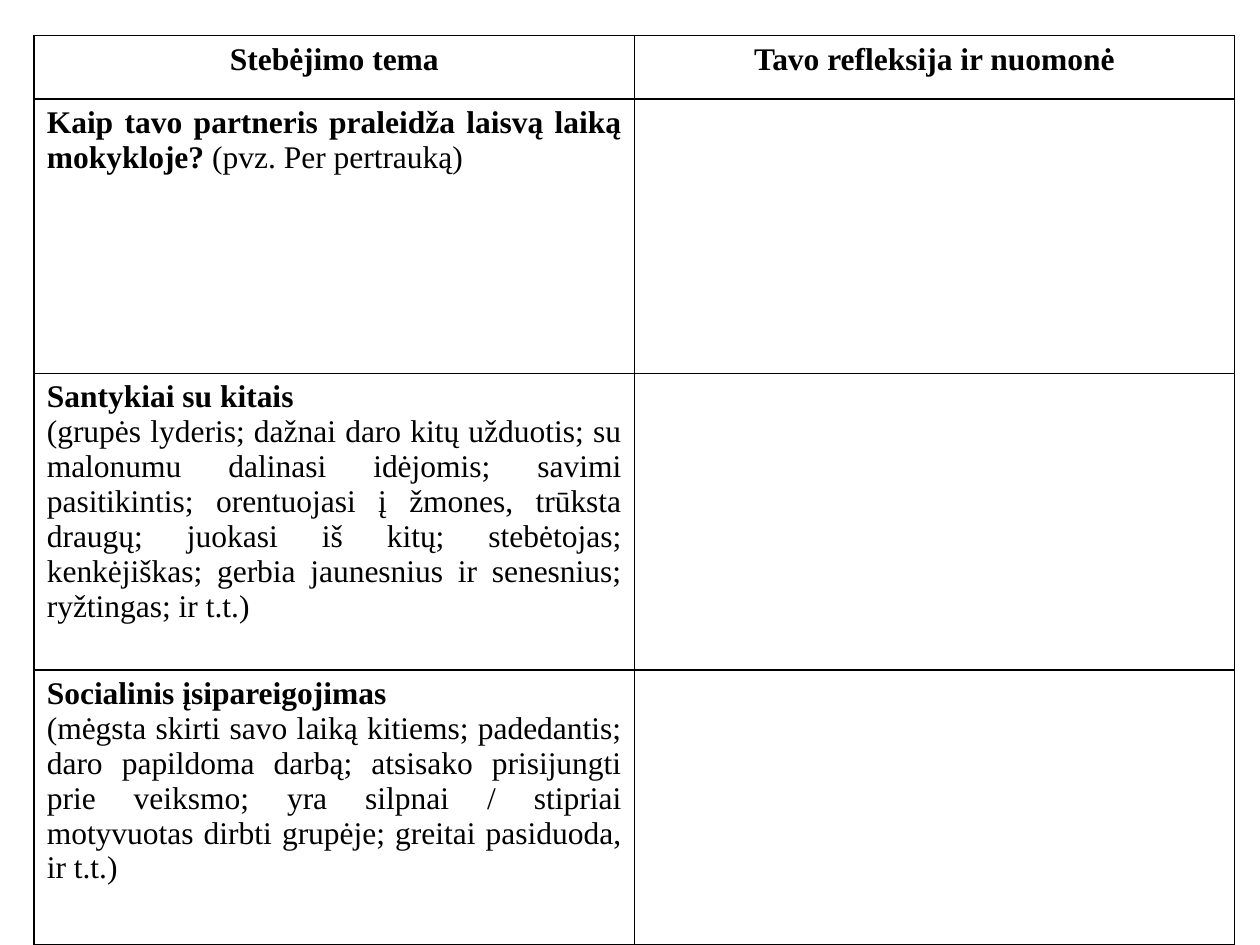
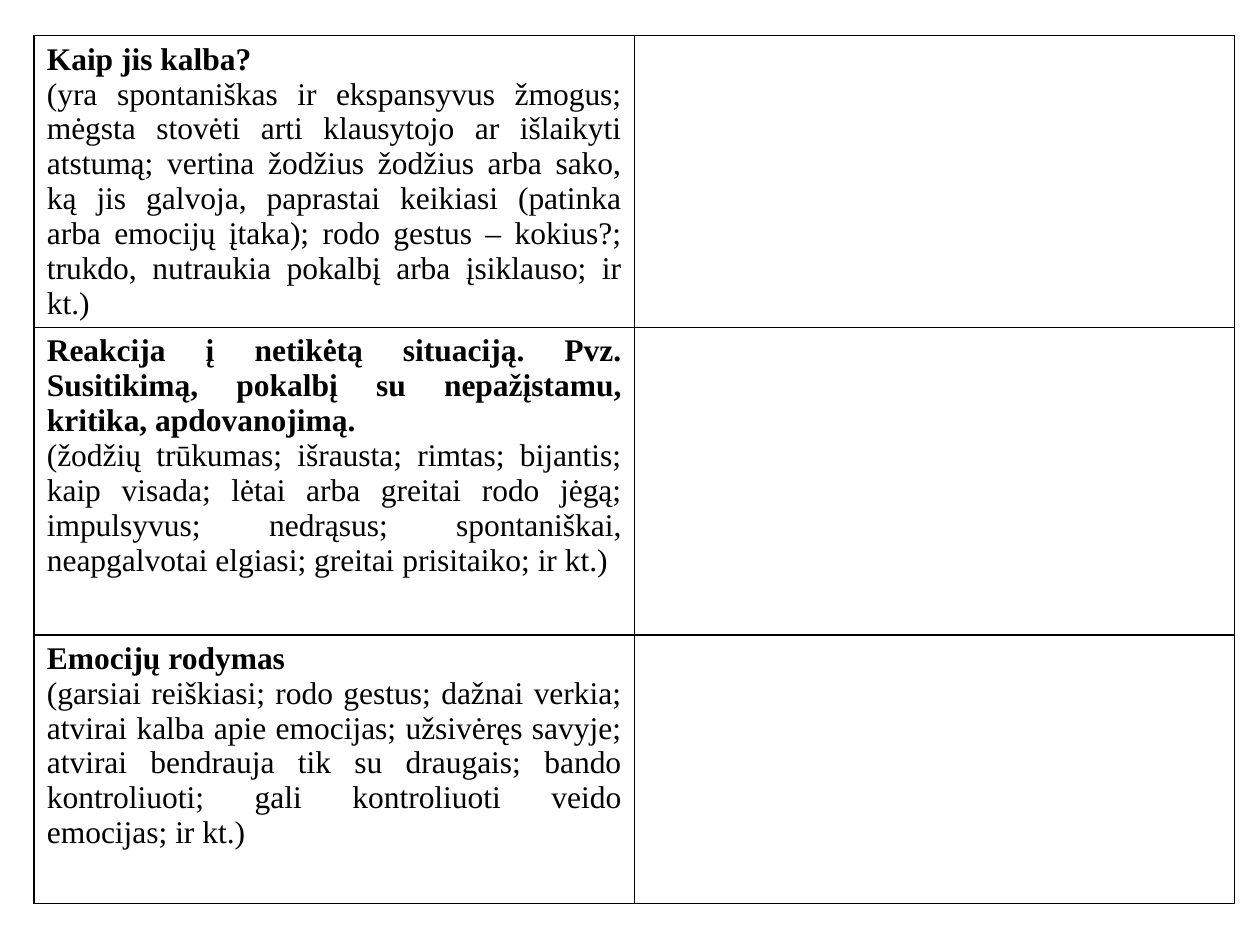
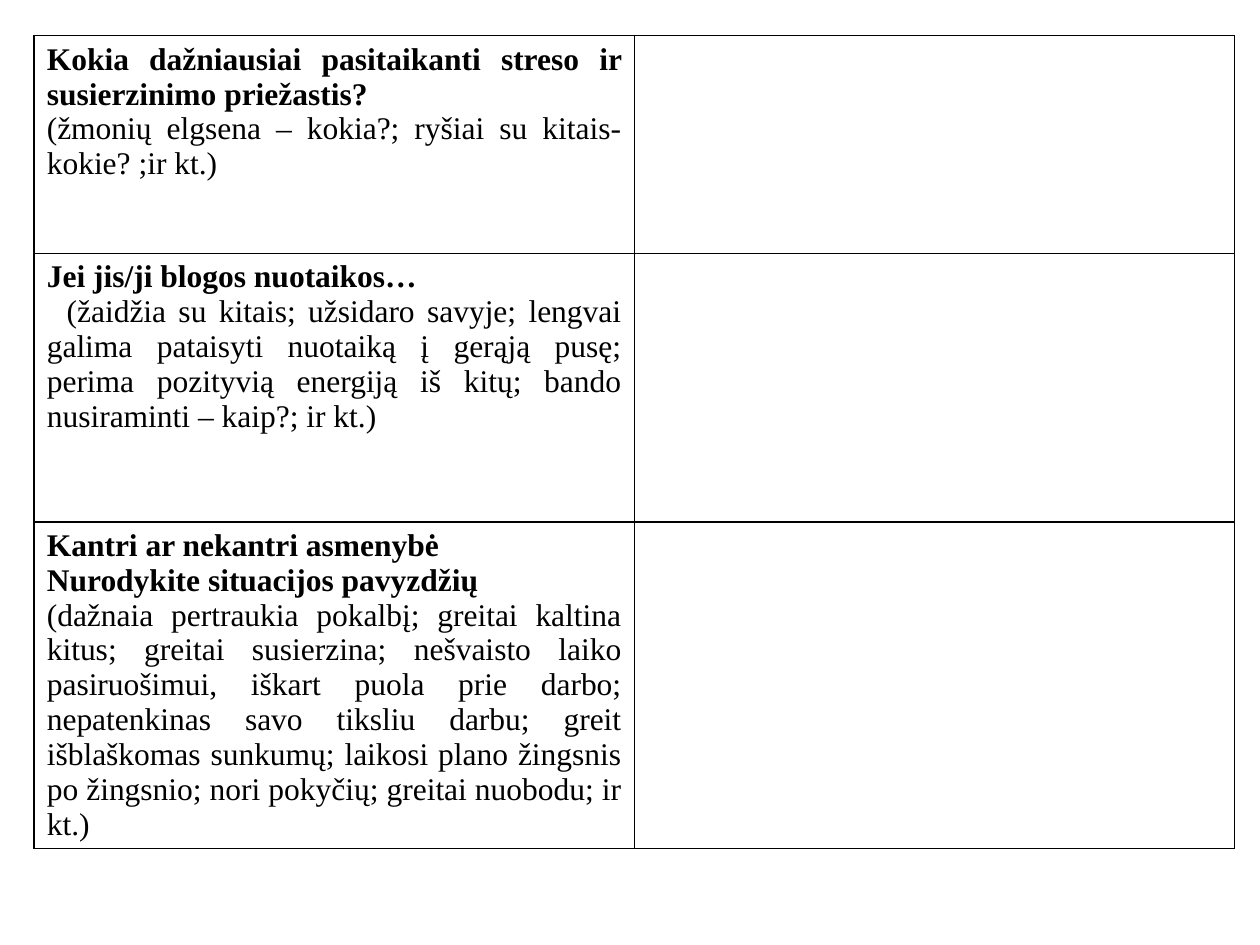
"""Build three slides of an observation sheet with room for reflections."""
from lxml.etree import SubElement
from pptx import Presentation
from pptx.dml.color import RGBColor
from pptx.enum.text import PP_ALIGN
from pptx.oxml.ns import qn
from pptx.util import Cm, Pt

INK = "000000"
PAPER = "FFFFFF"
FONT = "Times New Roman"
LEFT, TOP, COLUMN_WIDTH = Cm(0.69), Cm(0.72), Cm(12.1)
HEADINGS = ["Stebėjimo tema", "Tavo refleksija ir nuomonė"]
HEADING_HEIGHT = 1.28
INDENTED_TOPIC = "Jei jis/ji blogos nuotaikos…"

# Each topic holds its row height in cm and its paragraphs as (bold, regular) text.
SHEETS = [
    [
        (5.53, [("Kaip tavo partneris praleidža laisvą laiką mokykloje? ", "(pvz. Per pertrauką)")]),
        (5.98, [
            ("Santykiai su kitais", ""),
            ("", "(grupės lyderis; dažnai daro kitų užduotis; su malonumu dalinasi idėjomis; "
                 "savimi pasitikintis; orentuojasi į žmones, trūksta draugų; juokasi iš kitų; "
                 "stebėtojas; kenkėjiškas; gerbia jaunesnius ir senesnius; ryžtingas; ir t.t.)"),
        ]),
        (5.53, [
            ("Socialinis įsipareigojimas", ""),
            ("", "(mėgsta skirti savo laiką kitiems; padedantis; daro papildoma darbą; atsisako "
                 "prisijungti prie veiksmo; yra silpnai / stipriai motyvuotas dirbti grupėje; "
                 "greitai pasiduoda, ir t.t.)"),
        ]),
    ],
    [
        (5.87, [
            ("Kaip jis kalba?", ""),
            ("", "(yra spontaniškas ir ekspansyvus žmogus; mėgsta stovėti arti klausytojo ar "
                 "išlaikyti atstumą; vertina žodžius žodžius arba sako, ką jis galvoja, paprastai "
                 "keikiasi (patinka arba emocijų įtaka); rodo gestus – kokius?; trukdo, nutraukia "
                 "pokalbį arba įsiklauso; ir kt.)"),
        ]),
        (6.2, [
            ("Reakcija į netikėtą situaciją. Pvz. Susitikimą, pokalbį su nepažįstamu, kritika, "
             "apdovanojimą.", ""),
            ("", "(žodžių trūkumas; išrausta; rimtas; bijantis; kaip visada; lėtai arba greitai "
                 "rodo jėgą; impulsyvus; nedrąsus; spontaniškai, neapgalvotai elgiasi; greitai "
                 "prisitaiko; ir kt.)"),
        ]),
        (5.41, [
            ("Emocijų rodymas", ""),
            ("", "(garsiai reiškiasi; rodo gestus; dažnai verkia; atvirai kalba apie emocijas; "
                 "užsivėręs savyje; atvirai bendrauja tik su draugais; bando kontroliuoti; gali "
                 "kontroliuoti veido emocijas; ir kt.)"),
        ]),
    ],
    [
        (4.39, [
            ("Kokia dažniausiai pasitaikanti streso ir susierzinimo priežastis?", ""),
            ("", "(žmonių elgsena – kokia?; ryšiai su kitais-kokie? ;ir kt.)"),
        ]),
        (5.41, [
            (INDENTED_TOPIC, ""),
            ("", "(žaidžia su kitais; užsidaro savyje; lengvai galima pataisyti nuotaiką į gerąją "
                 "pusę; perima pozityvią energiją iš kitų; bando nusiraminti – kaip?; ir kt.)"),
        ]),
        (6.58, [
            ("Kantri ar nekantri asmenybė", ""),
            ("Nurodykite situacijos pavyzdžių", ""),
            ("", "(dažnaia pertraukia pokalbį; greitai kaltina kitus; greitai susierzina; nešvaisto "
                 "laiko pasiruošimui, iškart puola prie darbo; nepatenkinas savo tiksliu darbu; "
                 "greit išblaškomas sunkumų; laikosi plano žingsnis po žingsnio; nori pokyčių; "
                 "greitai nuobodu; ir kt.)"),
        ]),
    ],
]


def color(value):
    return RGBColor.from_string(value)


def write(cell, passages, alignment):
    for index, (strong, regular) in enumerate(passages):
        paragraph = cell.text_frame.add_paragraph() if index else cell.text_frame.paragraphs[0]
        paragraph.alignment = alignment
        paragraph.font.name = FONT
        paragraph.font.size = Pt(18)
        paragraph.font.color.rgb = color(INK)
        paragraph.font.bold = bool(strong)
        for passage in filter(None, (strong, regular)):
            paragraph.add_run().text = passage
        if strong and regular:
            paragraph.runs[1].font.bold = False


deck = Presentation()
deck.slide_width, deck.slide_height = Cm(25.4), Cm(19.05)

for number, topics in enumerate(SHEETS):
    slide = deck.slides.add_slide(deck.slide_layouts[6])
    heights = [height for height, _ in topics]
    first_topic = 0
    if number == 0:
        heights.insert(0, HEADING_HEIGHT)
        first_topic = 1
    sheet = slide.shapes.add_table(
        len(heights), 2, LEFT, TOP, 2 * COLUMN_WIDTH, Cm(sum(heights))).table
    sheet.first_row = sheet.horz_banding = False
    for column in sheet.columns:
        column.width = COLUMN_WIDTH
    for row, height in zip(sheet.rows, heights):
        row.height = Cm(height)

    for cell in sheet.iter_cells():
        properties = cell._tc.get_or_add_tcPr()
        for side in ("a:lnL", "a:lnR", "a:lnT", "a:lnB"):
            border = SubElement(properties, qn(side), w=str(Pt(1)))
            SubElement(SubElement(border, qn("a:solidFill")), qn("a:srgbClr"), val=INK)
        cell.fill.solid()
        cell.fill.fore_color.rgb = color(PAPER)

    if first_topic:
        for column, heading in enumerate(HEADINGS):
            write(sheet.cell(0, column), [(heading, "")], PP_ALIGN.CENTER)
    for row, (_, passages) in enumerate(topics, first_topic):
        topic = sheet.cell(row, 0)
        write(topic, passages, PP_ALIGN.JUSTIFY)
        if passages[0][0] == INDENTED_TOPIC:
            topic.text_frame.paragraphs[1]._p.get_or_add_pPr().set("indent", str(Cm(0.4)))

deck.save("out.pptx")
